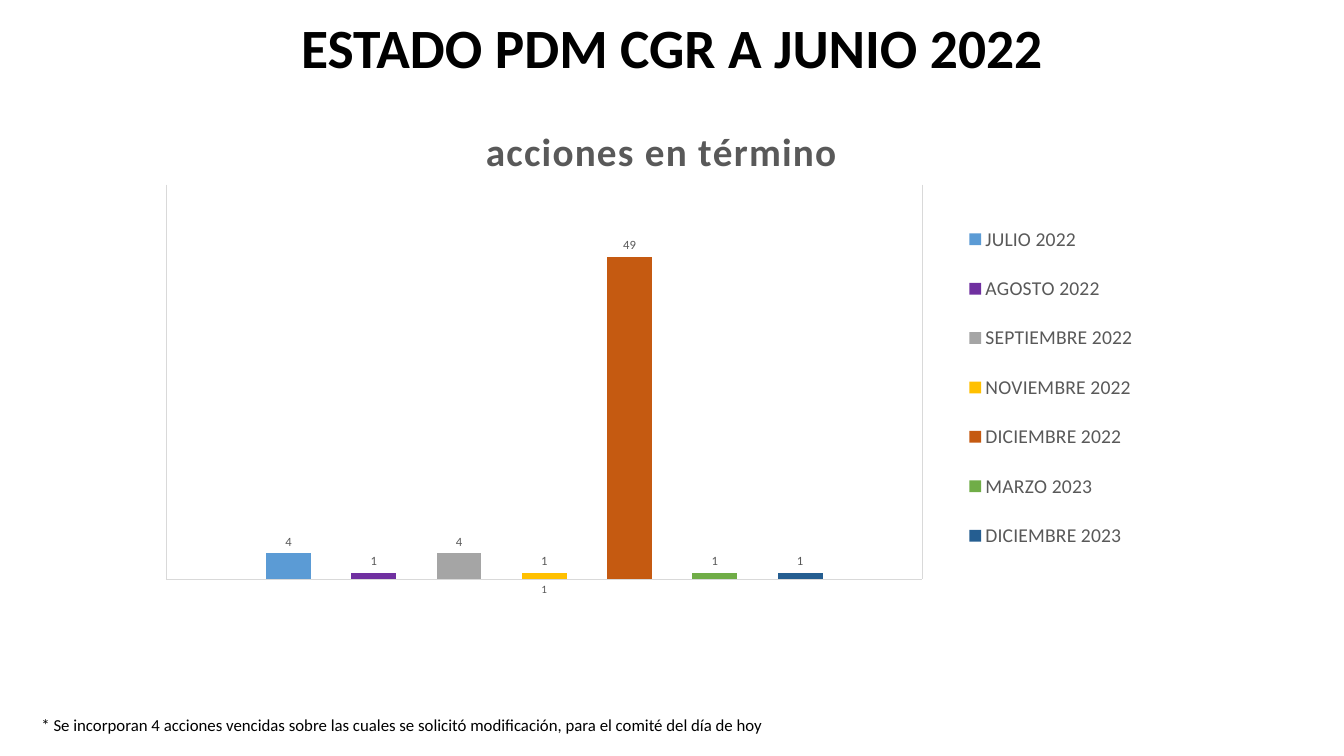
from lxml.etree import SubElement
from pptx import Presentation
from pptx.chart.data import CategoryChartData
from pptx.dml.color import RGBColor
from pptx.enum.chart import XL_CHART_TYPE, XL_LABEL_POSITION, XL_LEGEND_POSITION, XL_TICK_MARK
from pptx.enum.text import MSO_ANCHOR, MSO_AUTO_SIZE, PP_ALIGN
from pptx.oxml import parse_xml
from pptx.oxml.ns import nsdecls, qn
from pptx.util import Pt

PX = 9525
COLORS = {
    "text": "000000", "muted": "595959", "rule": "D9D9D9",
    "JULIO 2022": "5B9BD5", "AGOSTO 2022": "7030A0", "SEPTIEMBRE 2022": "A5A5A5",
    "NOVIEMBRE 2022": "FFC000", "DICIEMBRE 2022": "C55A11",
    "MARZO 2023": "70AD47", "DICIEMBRE 2023": "255E91",
}
ACTIONS = {
    "JULIO 2022": 4, "AGOSTO 2022": 1, "SEPTIEMBRE 2022": 4, "NOVIEMBRE 2022": 1,
    "DICIEMBRE 2022": 49, "MARZO 2023": 1, "DICIEMBRE 2023": 1,
}


def set_font(font, size, color, bold=False):
    for name, value in {"name": "Calibri", "size": Pt(size), "bold": bold}.items():
        setattr(font, name, value)
    font.color.rgb = RGBColor.from_string(COLORS[color])


def set_layout(parent, index, **values):
    old = parent.find(qn("c:layout"))
    if old is not None:
        parent.remove(old)
    layout = parse_xml(f"<c:layout {nsdecls('c')}><c:manualLayout/></c:layout>")
    for tag, value in values.items():
        SubElement(layout[0], qn(f"c:{tag}")).set("val", str(value))
    parent.insert(index, layout)


prs = Presentation()
prs.slide_width, prs.slide_height = 1280 * PX, 720 * PX
s = prs.slides.add_slide(prs.slide_layouts[5])

title = s.shapes.title
for name, value in {"left": 88, "top": 13, "width": 1104, "height": 70}.items():
    setattr(title, name, value * PX)
tf = title.text_frame
tf.auto_size = MSO_AUTO_SIZE.NONE
tf.vertical_anchor = MSO_ANCHOR.MIDDLE
p = tf.paragraphs[0]
p.alignment = PP_ALIGN.CENTER
p.line_spacing = 0.9
r = p.add_run()
r.text = "ESTADO PDM CGR A JUNIO 2022"
set_font(r.font, 39.6, "text", True)

note = s.shapes.add_textbox(30 * PX, 676 * PX, 777 * PX, 29 * PX)
tf = note.text_frame
tf.word_wrap = True
tf.auto_size = MSO_AUTO_SIZE.SHAPE_TO_FIT_TEXT
r = tf.paragraphs[0].add_run()
r.text = ("* Se incorporan 4 acciones vencidas sobre las cuales se solicitó "
          "modificación, para el comité del día de hoy")
set_font(r.font, 12, "text")

data = CategoryChartData(number_format="0")
data.categories = ["1"]
for month, count in ACTIONS.items():
    data.add_series(month, [count])
chart = s.shapes.add_chart(XL_CHART_TYPE.COLUMN_CLUSTERED,
                           132 * PX, 84 * PX, 982 * PX, 570 * PX, data).chart
set_font(chart.font, 10, "text")

chart.has_title = True
r = chart.chart_title.text_frame.paragraphs[0].add_run()
r.text = "acciones en término"
set_font(r.font, 28, "muted", True)
r.font._element.set("spc", "100")
set_layout(chart.chart_title._element, 1, xMode="edge", yMode="edge", x=0.33, y=0.05)

chart.has_legend = True
legend = chart.legend
legend.position = XL_LEGEND_POSITION.TOP
legend.include_in_layout = False
set_font(legend.font, 14, "muted")
set_layout(legend._element, 1, xMode="edge", yMode="edge", x=0.79, y=0.19, w=0.19, h=0.62)

plot = chart.plots[0]
plot.gap_width = 444
plot.overlap = -90
plot.vary_by_categories = False
set_layout(chart._chartSpace.chart.plotArea, 0, layoutTarget="inner",
           xMode="edge", yMode="edge", x=0.027, y=0.161, w=0.733, h=0.66)
for series in plot.series:
    series.format.fill.solid()
    series.format.fill.fore_color.rgb = RGBColor.from_string(COLORS[series.name])
    labels = series.data_labels
    for name, value in {"show_value": True, "position": XL_LABEL_POSITION.OUTSIDE_END,
                        "number_format": "0", "number_format_is_linked": False}.items():
        setattr(labels, name, value)
    set_font(labels.font, 9, "muted")

months = chart.category_axis
months.major_tick_mark = months.minor_tick_mark = XL_TICK_MARK.NONE
months.has_major_gridlines = True
set_font(months.tick_labels.font, 8, "muted")
for line in (months.format.line, months.major_gridlines.format.line):
    line.color.rgb = RGBColor.from_string(COLORS["rule"])
    line.width = Pt(0.75)

for name, value in {"visible": False, "has_major_gridlines": False,
                    "minimum_scale": 0, "maximum_scale": 60}.items():
    setattr(chart.value_axis, name, value)

prs.save("out.pptx")
